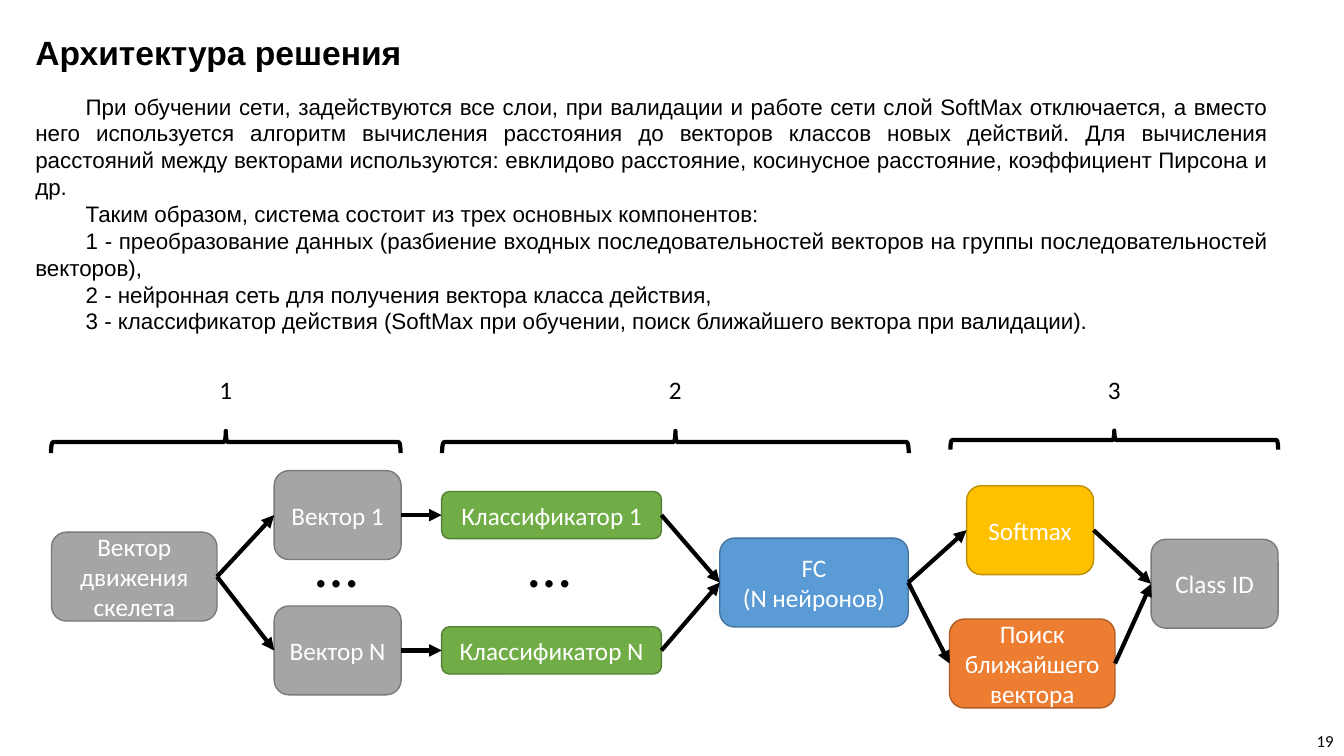
import dataclasses

import pptx
import pptx.dml.color
import pptx.enum.shapes
import pptx.enum.text
import pptx.oxml
import pptx.oxml.ns
import pptx.util

Cm = pptx.util.Cm
Pt = pptx.util.Pt
Align = pptx.enum.text.PP_ALIGN
Anchor = pptx.enum.text.MSO_ANCHOR
Shape = pptx.enum.shapes.MSO_SHAPE


@dataclasses.dataclass(frozen=True)
class Theme:
    heading_font: str = "Arial"
    diagram_font: str = "Calibri"
    black: str = "000000"
    white: str = "FFFFFF"
    gray: tuple = ("A5A5A5", "7A7A7A")
    green: tuple = ("70AD47", "538035")
    blue: tuple = ("5B9BD5", "43739E")
    yellow: tuple = ("FFC000", "BD8E00")
    orange: tuple = ("ED7D31", "AF5C24")
    title_size: int = 24
    body_size: int = 16
    diagram_size: int = 18
    dots_size: int = 44
    page_size: int = 12
    outline: int = 1
    stroke: int = 3


def rgb(color):
    return pptx.dml.color.RGBColor.from_string(color)


def apply(target, values):
    for name, value in values.items():
        setattr(target, name, value)


class Diagram:
    def __init__(self, slide, theme):
        self.shapes = slide.shapes
        self.theme = theme

    def fill_text(self, frame, lines, size, font, color, align, bold=False, indent=0):
        frame.text = "\n".join(lines)
        for paragraph in frame.paragraphs:
            paragraph.alignment = align
            apply(paragraph.font, {"size": Pt(size), "name": font, "bold": bold})
            paragraph.font.color.rgb = rgb(color)
            if indent:
                properties = paragraph._p.get_or_add_pPr()
                properties.set("marL", "0")
                properties.set("indent", str(Cm(indent)))

    def text(self, box, lines, size, font, align=Align.LEFT, wrap=False,
             anchor=Anchor.TOP, **style):
        frame = self.shapes.add_textbox(*map(Cm, box)).text_frame
        apply(frame, {"word_wrap": wrap, "vertical_anchor": anchor})
        self.fill_text(frame, lines, size, font, self.theme.black, align, **style)

    def node(self, lines, left, middle, width, colors, height=2.24):
        box = self.shapes.add_shape(
            Shape.ROUNDED_RECTANGLE, Cm(left), Cm(middle - height / 2), Cm(width), Cm(height))
        fill, outline = colors
        box.shadow.inherit = False
        box.fill.solid()
        box.fill.fore_color.rgb = rgb(fill)
        box.line.color.rgb = rgb(outline)
        box.line.width = Pt(self.theme.outline)
        apply(box.text_frame, {"word_wrap": True, "vertical_anchor": Anchor.MIDDLE})
        self.fill_text(box.text_frame, lines, self.theme.diagram_size,
                       self.theme.diagram_font, self.theme.white, Align.CENTER)
        return box

    def arrow(self, source, target):
        link = self.shapes.add_connector(
            pptx.enum.shapes.MSO_CONNECTOR.STRAIGHT, 0, 0, 0, 0)
        link.begin_connect(source, 3)
        link.end_connect(target, 1)
        link.line.color.rgb = rgb(self.theme.black)
        link.line.width = Pt(self.theme.stroke)
        head = pptx.oxml.parse_xml(
            f'<a:tailEnd {pptx.oxml.ns.nsdecls("a")} type="triangle"/>')
        link.line._get_or_add_ln().append(head)
        link._element.spPr.append(
            pptx.oxml.parse_xml(f'<a:effectLst {pptx.oxml.ns.nsdecls("a")}/>'))

    def stage(self, number, center, middle, span, depth):
        brace = self.shapes.add_shape(
            Shape.LEFT_BRACE, Cm(center - depth / 2), Cm(middle - span / 2), Cm(depth), Cm(span))
        brace.rotation = 90
        brace.shadow.inherit = False
        brace.fill.background()
        brace.line.color.rgb = rgb(self.theme.black)
        brace.line.width = Pt(self.theme.stroke)
        self.text((center - 0.42, 9.3, 0.84, 1.02), [str(number)],
                  self.theme.diagram_size, self.theme.diagram_font, Align.CENTER)


def main():
    deck = pptx.Presentation()
    apply(deck, {"slide_width": Cm(33.87), "slide_height": Cm(19.05)})
    theme = Theme()
    diagram = Diagram(deck.slides.add_slide(deck.slide_layouts[6]), theme)

    diagram.text((0.64, 0.69, 9.83, 1.27), ["Архитектура решения"],
                 theme.title_size, theme.heading_font, bold=True)
    explanation = [
        "При обучении сети, задействуются все слои, при валидации и работе сети слой SoftMax "
        "отключается, а вместо него используется алгоритм вычисления расстояния до векторов "
        "классов новых действий. Для вычисления расстояний между векторами используются: "
        "евклидово расстояние, косинусное расстояние, коэффициент Пирсона и др.",
        "Таким образом, система состоит из трех основных компонентов:",
        "1 - преобразование данных (разбиение входных последовательностей векторов на группы "
        "последовательностей векторов),",
        "2 - нейронная сеть для получения вектора класса действия,",
        "3 - классификатор действия (SoftMax при обучении, поиск ближайшего вектора при "
        "валидации).",
    ]
    diagram.text((0.64, 2.21, 31.57, 6.4), explanation, theme.body_size,
                 theme.heading_font, Align.JUSTIFY, wrap=True, indent=1.27)
    diagram.text((26.24, 18.16, 7.62, 1.02), ["19"], theme.page_size,
                 theme.diagram_font, Align.RIGHT, wrap=True, anchor=Anchor.MIDDLE)

    skeleton = diagram.node(["Вектор движения скелета"], 1.3, 14.53, 4.17, theme.gray)
    dense = diagram.node(["FC", "(N нейронов)"], 18.14, 14.68, 4.75, theme.blue)
    softmax = diagram.node(["Softmax"], 24.36, 13.36, 3.2, theme.yellow)
    search = diagram.node(["Поиск ближайшего вектора"], 23.93, 16.72, 4.17, theme.orange)
    class_id = diagram.node(["Class ID"], 29.01, 14.71, 3.2, theme.gray)

    for index, middle in (("1", 12.98), ("N", 16.39)):
        vector = diagram.node([f"Вектор {index}"], 6.91, middle, 3.2, theme.gray)
        classifier = diagram.node(
            [f"Классификатор {index}"], 11.13, middle, 5.54, theme.green, height=1.19)
        diagram.arrow(skeleton, vector)
        diagram.arrow(vector, classifier)
        diagram.arrow(classifier, dense)

    for decision in (softmax, search):
        diagram.arrow(dense, decision)
        diagram.arrow(decision, class_id)

    for dots_left in (7.7, 13.08):
        diagram.text((dots_left, 13.12, 1.6, 2.13), ["…"], theme.dots_size, theme.diagram_font)

    stages = [(5.69, 11.14, 8.81, 0.56), (17.02, 11.14, 11.76, 0.56), (28.08, 11.09, 8.26, 0.48)]
    for number, extent in enumerate(stages, 1):
        diagram.stage(number, *extent)

    deck.save("out.pptx")


if __name__ == "__main__":
    main()
